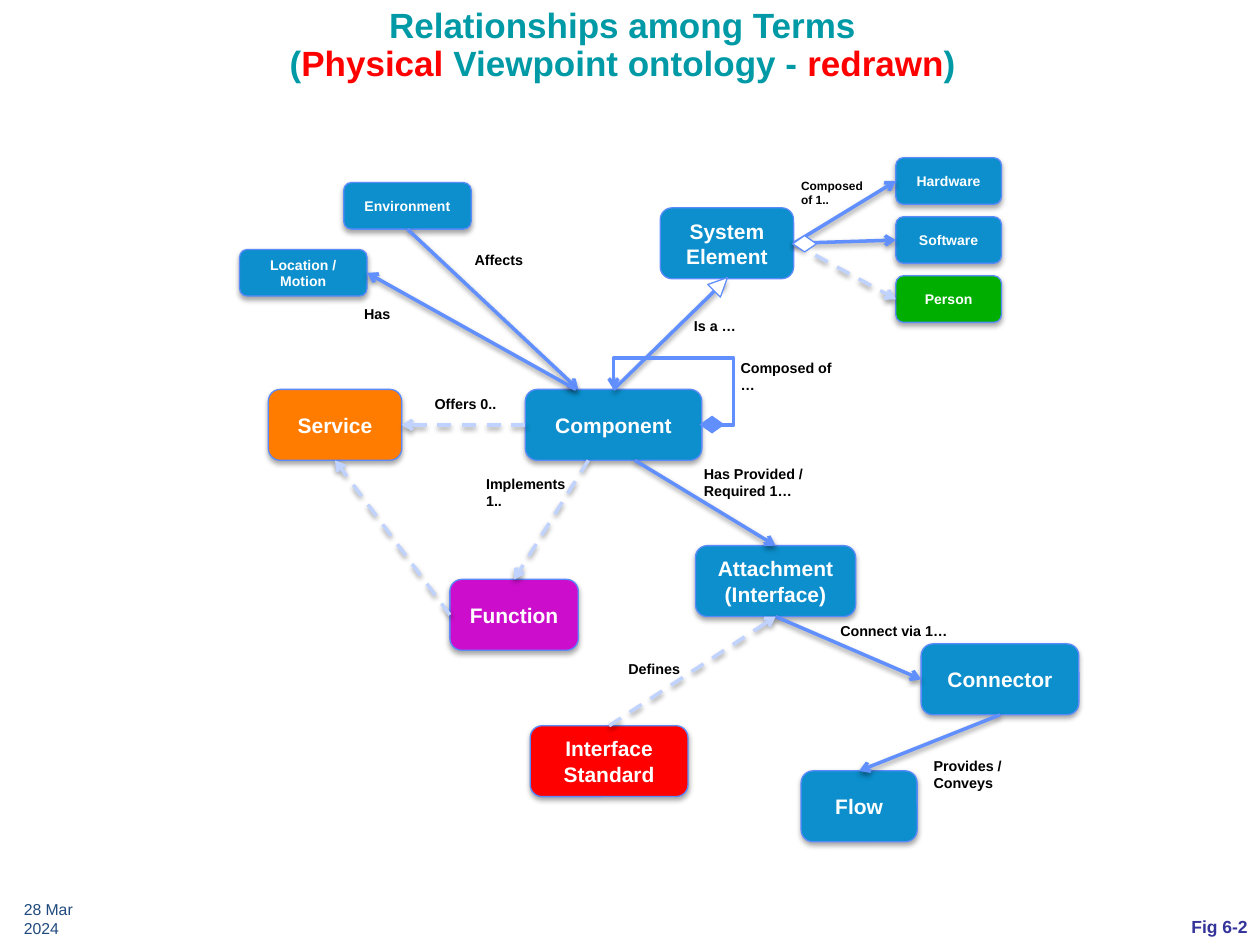
from lxml.etree import SubElement
from pptx import Presentation
from pptx.dml.color import RGBColor
from pptx.enum.dml import MSO_LINE
from pptx.enum.shapes import MSO_CONNECTOR, MSO_SHAPE
from pptx.enum.text import MSO_ANCHOR, MSO_AUTO_SIZE, PP_ALIGN
from pptx.oxml.ns import qn
from pptx.util import Cm, Pt

TOP, LEFT, BOTTOM, RIGHT = range(4)
BLUE, GREEN, ORANGE, PURPLE, RED = "0C8FCC", "00AE00", "FF7C00", "CC0ECC", "FF0000"
TEAL, BLACK, WHITE, NAVY, INDIGO = "0099A6", "000000", "FFFFFF", "1F497D", "333399"
OUTLINE, SOLID, FAINT = "5B8AFB", "618FFD", "C0D2FE"
LARGE, SMALL = (1.43, 12), (0.94, 8)
TRIO_TOP, TRIO_STEP = 3.18, 1.19

NODES = {
    "Attachment\n(Interface)": (14.02, 11, 3.23, LARGE, BLUE),
    "System\nElement": (13.31, 4.19, 2.69, LARGE, BLUE),
    "Component": (10.59, 7.85, 3.56, LARGE, BLUE),
    "Function": (9.07, 11.68, 2.59, LARGE, PURPLE),
    "Service": (5.41, 7.85, 2.69, LARGE, ORANGE),
    "Environment": (6.93, 3.68, 2.57, SMALL, BLUE),
    "Location / Motion": (4.83, 5.03, 2.57, SMALL, BLUE),
    "Connector": (18.57, 12.98, 3.18, LARGE, BLUE),
    "Flow": (16.15, 15.54, 2.34, LARGE, BLUE),
    "Interface Standard": (10.69, 14.63, 3.18, LARGE, RED),
}
for row, (member, member_fill) in enumerate(
        {"Hardware": BLUE, "Software": BLUE, "Person": GREEN}.items()):
    NODES[member] = (18.06, TRIO_TOP + row * TRIO_STEP, 2.13, SMALL, member_fill)

LINKS = [
    ("Component", BOTTOM, -0.51, "Function", TOP, 0, FAINT, "arrow"),
    ("Component", TOP, 0, "System\nElement", BOTTOM, 0, SOLID, "triangle"),
    ("Component", LEFT, 0, "Service", RIGHT, 0, FAINT, "arrow"),
    ("Component", BOTTOM, 0.43, "Attachment\n(Interface)", TOP, 0, SOLID, "arrow"),
    ("System\nElement", RIGHT, 0, "Hardware", LEFT, 0, SOLID, "arrow"),
    ("System\nElement", RIGHT, 0, "Software", LEFT, 0, SOLID, "arrow"),
    ("System\nElement", RIGHT, 0, "Person", LEFT, 0, FAINT, "arrow"),
    ("Environment", BOTTOM, 0, "Component", TOP, -0.71, SOLID, "arrow"),
    ("Component", TOP, -0.76, "Location / Motion", RIGHT, 0, SOLID, "arrow"),
    ("Attachment\n(Interface)", BOTTOM, 0, "Connector", LEFT, 0, SOLID, "arrow"),
    ("Connector", BOTTOM, 0, "Flow", TOP, 0, SOLID, "arrow"),
    ("Function", LEFT, 0, "Service", BOTTOM, 0, FAINT, "arrow"),
    ("Interface Standard", TOP, 0, "Attachment\n(Interface)", BOTTOM, 0, FAINT, "arrow"),
]

LABELS = [
    ("Implements 1..", 9.55, 9.45, 2.13, 0.97, 8.2),
    ("Is a …", 13.74, 6.27, 2.41, 0.61, 8.2),
    ("Offers 0..", 8.51, 7.85, 1.9, 0.61, 8.2),
    ("Has Provided / Required 1…", 13.94, 9.25, 3.23, 0.97, 8.2),
    ("Composed of 1..", 15.9, 3.48, 1.78, 0.84, 6.8),
    ("Affects", 9.32, 4.93, 1.55, 0.53, 8.2),
    ("Connect via 1…", 16.69, 12.42, 3.18, 0.61, 8.2),
    ("Composed of …", 14.68, 7.11, 2.41, 0.97, 8.2),
    ("Has", 7.09, 6.02, 1.55, 0.61, 8.2),
    ("Provides / Conveys", 18.57, 15.14, 2.18, 0.97, 8.2),
    ("Defines", 12.42, 13.18, 2.36, 0.61, 8.2),
]

MARKERS = [
    (MSO_SHAPE.FLOWCHART_DECISION, 14.1, 8.38, 0.51, 0.36, 0, SOLID, None),
    (MSO_SHAPE.FLOWCHART_DECISION, 15.98, 4.75, 0.48, 0.33, 0, WHITE, SOLID),
    (MSO_SHAPE.ISOSCELES_TRIANGLE, 14.35, 5.54, 0.36, 0.38, 45.3, WHITE, SOLID),
]


def colour(hex_text):
    return RGBColor.from_string(hex_text)


def apply(target, formats):
    for key, value in formats.items():
        setattr(target, key, value)


class OntologySlide:
    """Holds the diagram style and the slide on which it is drawn."""

    font = {"name": "Arial", "bold": True}

    def __init__(self, slide):
        self.slide = slide
        self.nodes = {}

    def add_words(self, paragraph, text, size, ink, **formats):
        run = paragraph.add_run()
        run.text = text
        apply(run.font, {**self.font, "size": Pt(size), **formats})
        run.font.color.rgb = colour(ink)

    def shade(self, shape, opacity, distance):
        properties = shape._element.spPr
        effects = properties.find(qn("a:effectLst"))
        if effects is None:
            effects = SubElement(properties, qn("a:effectLst"))
        if opacity:
            shadow = SubElement(effects, qn("a:outerShdw"), blurRad=str(Pt(3.1)),
                                dist=str(Pt(distance)), dir="5400000", rotWithShape="0")
            ink = SubElement(shadow, qn("a:srgbClr"), val=BLACK)
            SubElement(ink, qn("a:alpha"), val=str(opacity * 1000))

    def block(self, kind, box, fill, outline):
        shape = self.slide.shapes.add_shape(kind, *map(Cm, box))
        shape.shadow.inherit = False
        shape.fill.solid()
        shape.fill.fore_color.rgb = colour(fill)
        if outline:
            shape.line.color.rgb = colour(outline)
            shape.line.width = Pt(0.75)
        else:
            shape.line.fill.background()
        return shape

    def node(self, term, left, top, width, scale, fill):
        height, size = scale
        shape = self.block(MSO_SHAPE.ROUNDED_RECTANGLE, (left, top, width, height), fill, OUTLINE)
        if term != "System\nElement":
            self.shade(shape, 35, 1.8)
        frame = shape.text_frame
        apply(frame, {"word_wrap": True, "vertical_anchor": MSO_ANCHOR.MIDDLE})
        for index, line in enumerate(term.split("\n")):
            paragraph = frame.add_paragraph() if index else frame.paragraphs[0]
            paragraph.alignment = PP_ALIGN.CENTER
            self.add_words(paragraph, line, size, WHITE)
        self.nodes[term] = shape

    def site(self, term, side, shift):
        node = self.nodes[term]
        across, down = {TOP: (0.5, 0), LEFT: (0, 0.5), BOTTOM: (0.5, 1), RIGHT: (1, 0.5)}[side]
        return (int(node.left + across * node.width + Cm(shift)),
                int(node.top + down * node.height))

    def link(self, source, exit_side, exit_shift, target, entry_side, entry_shift,
             ink, head, kind=MSO_CONNECTOR.STRAIGHT, opacity=38):
        line = self.slide.shapes.add_connector(
            kind, *self.site(source, exit_side, exit_shift),
            *self.site(target, entry_side, entry_shift))
        if not exit_shift:
            line.begin_connect(self.nodes[source], exit_side)
        if not entry_shift:
            line.end_connect(self.nodes[target], entry_side)
        line.line.color.rgb = colour(ink)
        line.line.width = Pt(2)
        if ink == FAINT:
            line.line.dash_style = MSO_LINE.DASH
        SubElement(line._element.spPr.find(qn("a:ln")), qn("a:tailEnd"), type=head)
        self.shade(line, opacity, 1.6)
        return line

    def loop(self, term):
        line = self.link(term, RIGHT, 0, term, TOP, 0, SOLID, "arrow", MSO_CONNECTOR.ELBOW, 0)
        geometry = line._element.spPr.find(qn("a:prstGeom"))
        geometry.set("prst", "bentConnector4")
        guides = geometry.find(qn("a:avLst"))
        if guides is None:
            guides = SubElement(geometry, qn("a:avLst"))
        for guide, value in {"adj1": -35800, "adj2": 188900}.items():
            SubElement(guides, qn("a:gd"), name=guide, fmla=f"val {value}")

    def text(self, box, lines, size, frame_formats, paragraph_formats=None, **font_formats):
        frame = self.slide.shapes.add_textbox(*map(Cm, box)).text_frame
        apply(frame, frame_formats)
        paragraph = frame.paragraphs[0]
        apply(paragraph, paragraph_formats or {})
        for index, line in enumerate(lines):
            if index:
                paragraph.add_line_break()
            for words, ink in line:
                self.add_words(paragraph, words, size, ink, **font_formats)

    def marker(self, kind, left, top, width, height, angle, fill, outline):
        self.block(kind, (left, top, width, height), fill, outline).rotation = angle


def main():
    deck = Presentation()
    apply(deck, {"slide_width": Cm(25.4), "slide_height": Cm(19.05)})
    ontology = OntologySlide(deck.slides.add_slide(deck.slide_layouts[6]))
    ontology.text((1.12, 0.05, 22.86, 2.13),
                  [[("Relationships among Terms", TEAL)],
                   [("(", TEAL), ("Physical", RED), (" Viewpoint ontology - ", TEAL),
                    ("redrawn", RED), (")", TEAL)]],
                  20, {"word_wrap": True}, {"alignment": PP_ALIGN.CENTER, "line_spacing": 0.9})
    for term, look in NODES.items():
        ontology.node(term, *look)
    for link in LINKS:
        ontology.link(*link)
    ontology.loop("Component")
    for words, left, top, width, height, size in LABELS:
        ontology.text((left, top, width, height), [[(words, BLACK)]], size,
                      {"word_wrap": True, "auto_size": MSO_AUTO_SIZE.SHAPE_TO_FIT_TEXT})
    for marker in MARKERS:
        ontology.marker(*marker)
    footer = {"word_wrap": False, "vertical_anchor": MSO_ANCHOR.MIDDLE}
    ontology.text((0.23, 18.16, 2.06, 0.71), [[("28 Mar 2024", NAVY)]], 9, footer, bold=False)
    ontology.text((20.6, 18.31, 4.8, 0.74), [[("Fig 6-2", INDIGO)]], 10, footer,
                  {"alignment": PP_ALIGN.RIGHT})
    deck.save("out.pptx")


if __name__ == "__main__":
    main()
